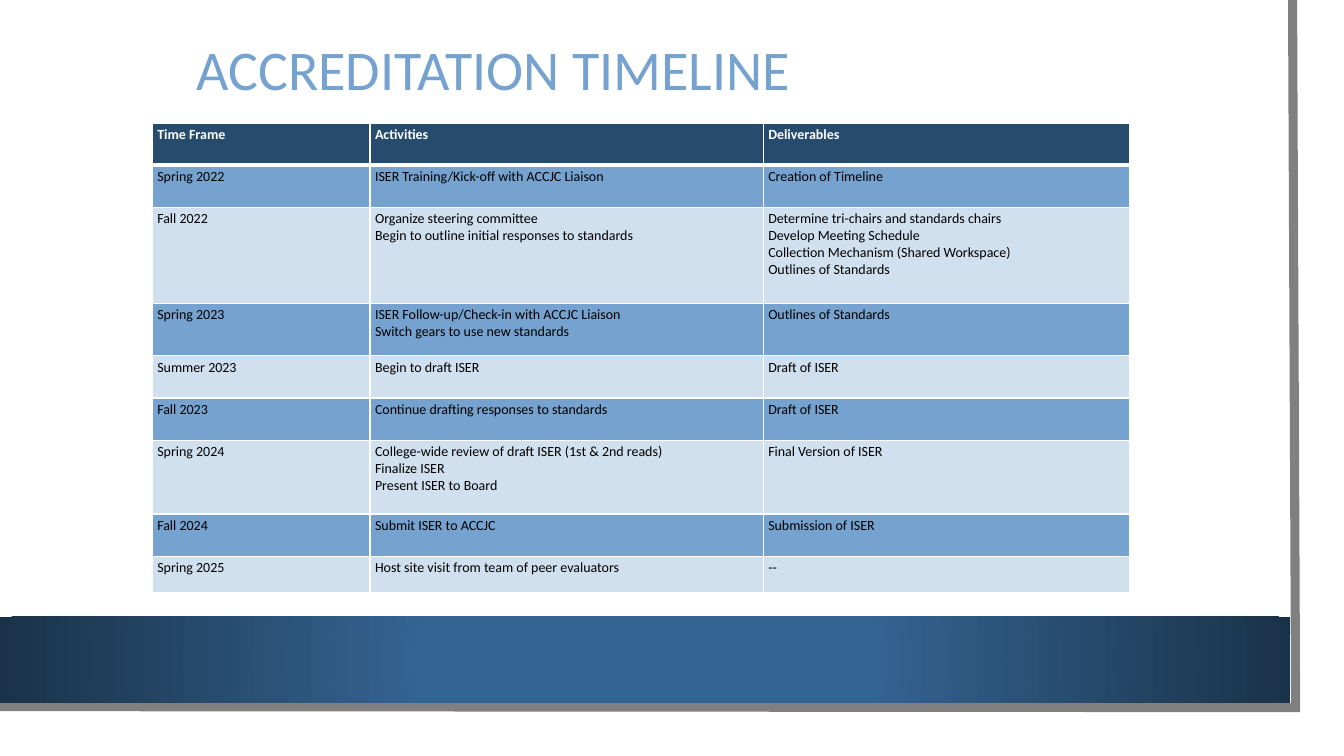
from dataclasses import dataclass

from lxml.etree import SubElement
from pptx import Presentation
from pptx.dml.color import RGBColor
from pptx.enum.shapes import MSO_SHAPE
from pptx.enum.text import MSO_ANCHOR
from pptx.oxml.ns import qn
from pptx.util import Inches, Pt

FONT = "Calibri"
WHITE, BLACK, GRAY = "FFFFFF", "000000", "808080"
NAVY, BLUE, PALE = "274B6D", "75A2CE", "D1E0EF"
BAND_CENTER, BAND_EDGE = "346492", "1A3249"


@dataclass
class Period:
    height: float
    time_frame: str
    activities: str
    deliverables: str


COLUMN_WIDTHS = [2.16, 3.9, 3.63]
PERIODS = [
    Period(0.42, "Time Frame", "Activities", "Deliverables"),
    Period(0.42, "Spring 2022", "ISER Training/Kick-off with ACCJC Liaison", "Creation of Timeline"),
    Period(0.95, "Fall 2022",
           "Organize steering committee\nBegin to outline initial responses to standards",
           "Determine tri-chairs and standards chairs\nDevelop Meeting Schedule\n"
           "Collection Mechanism (Shared Workspace)\nOutlines of Standards"),
    Period(0.52, "Spring 2023",
           "ISER Follow-up/Check-in with ACCJC Liaison\nSwitch gears to use new standards",
           "Outlines of Standards"),
    Period(0.42, "Summer 2023", "Begin to draft ISER", "Draft of ISER"),
    Period(0.42, "Fall 2023", "Continue drafting responses to standards", "Draft of ISER"),
    Period(0.73, "Spring 2024",
           "College-wide review of draft ISER (1st & 2nd reads)\nFinalize ISER\nPresent ISER to Board",
           "Final Version of ISER"),
    Period(0.42, "Fall 2024", "Submit ISER to ACCJC", "Submission of ISER"),
    Period(0.36, "Spring 2025", "Host site visit from team of peer evaluators", "--"),
]


def rgb(color: str) -> RGBColor:
    return RGBColor.from_string(color)


def apply(target, values: dict) -> None:
    for name, value in values.items():
        setattr(target, name, value)


def style_font(font, size: float, color: str, bold: bool = False) -> None:
    apply(font, {"name": FONT, "size": Pt(size), "bold": bold})
    font.color.rgb = rgb(color)


def add_rectangle(page, left: float, top: float, width: float, height: float):
    box = page.shapes.add_shape(MSO_SHAPE.RECTANGLE, Inches(left), Inches(top),
                                Inches(width), Inches(height))
    box.shadow.inherit = False
    box.line.fill.background()
    return box


def add_frame(page) -> None:
    sheet = add_rectangle(page, 0, 0, 13.1, 7.27)
    sheet.fill.solid()
    sheet.fill.fore_color.rgb = rgb(WHITE)

    # Gray edge along the right and the bottom
    builder = page.shapes.build_freeform(Inches(12.82), 0)
    builder.add_line_segments([(Inches(12.85), Inches(7.02)), (Inches(-0.03), Inches(7.01))],
                              close=False)
    edge = builder.convert_to_shape()
    edge.shadow.inherit = False
    edge.fill.background()
    edge.line.color.rgb = rgb(GRAY)
    edge.line.width = Pt(6.5)
    SubElement(edge.line._get_or_add_ln(), qn("a:miter"), lim="800000")

    # Footer band with a radial gradient
    band = add_rectangle(page, 0, 6.12, 12.8, 0.85)
    band.fill.gradient()
    stops = [(0.34, BAND_CENTER), (1, BAND_EDGE)]
    for stop, (position, color) in zip(band.fill.gradient_stops, stops):
        stop.position = position
        stop.color.rgb = rgb(color)
    gradient = band._element.spPr.find(qn("a:gradFill"))
    gradient.remove(gradient.find(qn("a:lin")))
    radial = SubElement(gradient, qn("a:path"), path="circle")
    SubElement(radial, qn("a:fillToRect"), l="50000", t="50000", r="50000", b="50000")


def add_title(page, text: str) -> None:
    box = page.shapes.add_textbox(Inches(1.85), Inches(0.29), Inches(9.49), Inches(0.86))
    apply(box.text_frame, {"word_wrap": True, "vertical_anchor": MSO_ANCHOR.MIDDLE})
    para = box.text_frame.paragraphs[0]
    para.line_spacing = 0.9
    span = para.add_run()
    span.text = text
    style_font(span.font, 40, BLUE)


def set_borders(cell, widths: dict[str, float]) -> None:
    properties = cell._tc.get_or_add_tcPr()
    for index, (side, width) in enumerate(widths.items()):
        line = SubElement(properties, qn(f"a:{side}"), w=str(Pt(width)))
        fill = SubElement(line, qn("a:solidFill"))
        SubElement(fill, qn("a:srgbClr"), val=WHITE)
        properties.insert(index, line)


def fill_cell(cell, text: str, row: int) -> None:
    header = row == 0
    apply(cell, {"text": text,
                 "margin_left": Inches(0.05), "margin_right": Inches(0.05),
                 "margin_top": Inches(0.03), "margin_bottom": Inches(0.03)})
    for para in cell.text_frame.paragraphs:
        for span in para.runs:
            style_font(span.font, 10, WHITE if header else BLACK, header)
    cell.fill.solid()
    cell.fill.fore_color.rgb = rgb(NAVY if header else BLUE if row % 2 else PALE)
    set_borders(cell, {"lnL": 1, "lnR": 1, "lnT": 3 if row == 1 else 1, "lnB": 3 if header else 1})


def add_timeline(page) -> None:
    table = page.shapes.add_table(
        len(PERIODS), len(COLUMN_WIDTHS), Inches(1.51), Inches(1.22),
        Inches(sum(COLUMN_WIDTHS)), Inches(sum(period.height for period in PERIODS))).table
    table.horz_banding = False
    for column, width in zip(table.columns, COLUMN_WIDTHS):
        column.width = Inches(width)
    for row, period in enumerate(PERIODS):
        table.rows[row].height = Inches(period.height)
        texts = [period.time_frame, period.activities, period.deliverables]
        for column, text in enumerate(texts):
            fill_cell(table.cell(row, column), text, row)


def main() -> None:
    deck = Presentation()
    apply(deck, {"slide_width": Inches(13.33), "slide_height": Inches(7.5)})
    page = deck.slides.add_slide(deck.slide_layouts[6])
    add_frame(page)
    add_title(page, "ACCREDITATION TIMELINE")
    add_timeline(page)
    deck.save("out.pptx")


if __name__ == "__main__":
    main()
